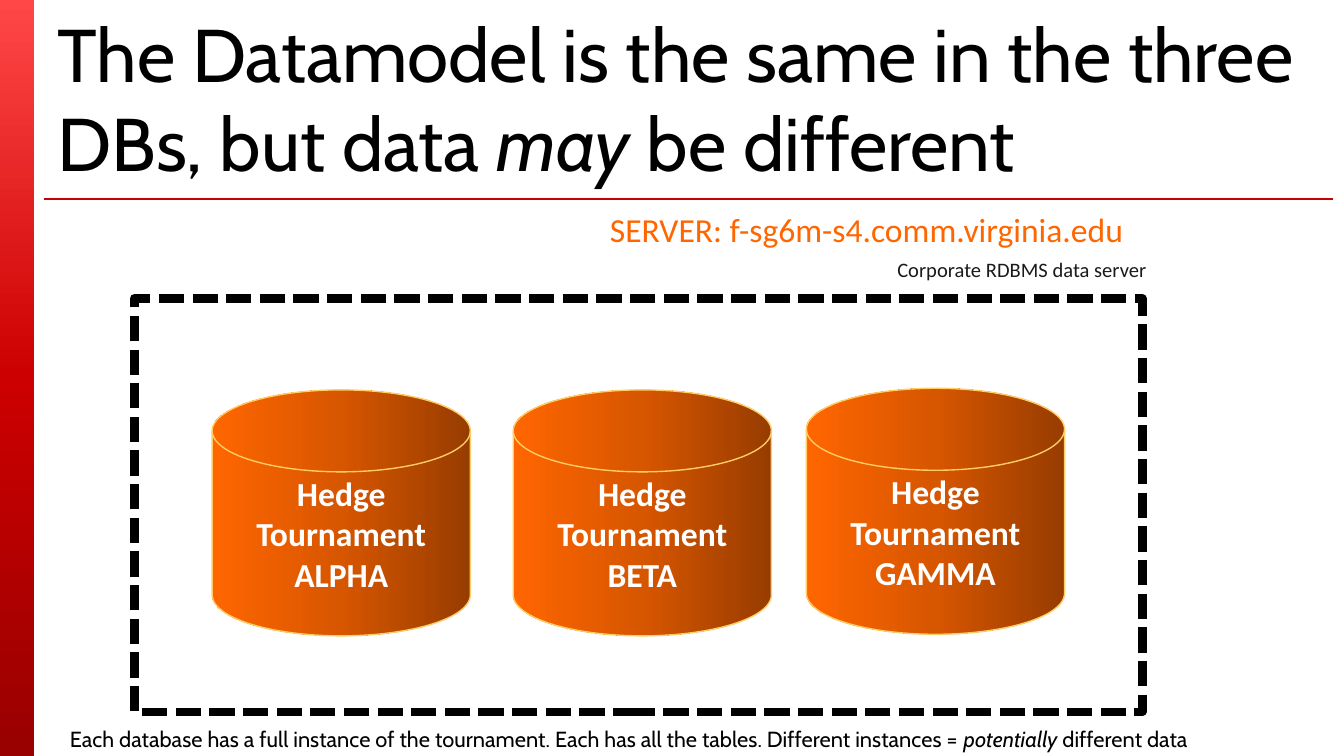
from dataclasses import dataclass, field
from typing import Any, NamedTuple

from lxml import etree
from pptx import Presentation
from pptx.dml.color import RGBColor
from pptx.enum import dml, shapes, text
from pptx.oxml import ns
from pptx.util import Cm, Pt


@dataclass(frozen=True)
class Theme:
    """Colours, gradients (position in percent, colour) and text formats."""
    rule: str = "C80000"
    frame: str = "000000"
    can_edge: str = "FFCC66"
    bar: tuple = ((0, "FF4747"), (50, "CC0000"), (100, "990000"))
    can: tuple = ((0, "973C00"), (50, "D75600"), (100, "FF6600"))
    title: dict = field(default_factory=lambda: dict(name="Cabin", size=Pt(40), color="000000"))
    note: dict = field(default_factory=lambda: dict(name="Cabin", size=Pt(11.7), color="000000"))
    server: dict = field(default_factory=lambda: dict(name="Calibri", size=Pt(18), color="FF6600"))
    product: dict = field(default_factory=lambda: dict(name="Calibri", size=Pt(11), color="1A1A1A"))
    database: dict = field(
        default_factory=lambda: dict(name="Calibri", size=Pt(18), color="FFFFFF", bold=True))


class Box(NamedTuple):
    left: float
    top: float
    width: float
    height: float

    def lengths(self) -> list[Cm]:
        return [Cm(v) for v in self]


class Database(NamedTuple):
    name: str
    left: float
    top: float


class Label(NamedTuple):
    box: Box
    words: tuple[str, ...]  # every second piece is italic
    style: dict[str, Any]
    anchor: Any = text.MSO_ANCHOR.MIDDLE
    tight: bool = False  # centred, unwrapped, without insets


THEME = Theme()
CAN_WIDTH, CAN_HEIGHT = 4.88, 4.65
DATABASES = (
    Database("ALPHA", 4.01, 7.37),
    Database("BETA", 9.7, 7.37),
    Database("GAMMA", 15.24, 7.34),
)
LABELS = (
    Label(Box(0.84, 0.15, 24.34, 3.38),
          ("The Datamodel is the same in the three DBs, but data ", "may", " be different"),
          THEME.title),
    Label(Box(1.07, 13.59, 24.34, 0.69),
          ("Each database has a full instance of the tournament. Each has all the tables. "
           "Different instances = ", "potentially ", "different data"),
          THEME.note, text.MSO_ANCHOR.TOP),
    Label(Box(11.48, 3.96, 9.8, 0.76), ("SERVER: f-sg6m-s4.comm.virginia.edu",),
          THEME.server, tight=True),
    Label(Box(16.94, 4.85, 4.75, 0.48), ("Corporate RDBMS data server ",),
          THEME.product, tight=True),
)


def add_run(p, words: str, style: dict[str, Any], **extra: Any) -> None:
    r = p.add_run()
    r.text = words
    for key, value in {**style, **extra}.items():
        if key == "color":
            r.font.color.rgb = RGBColor.from_string(value)
        else:
            setattr(r.font, key, value)


def fill_gradient(sp, stops: tuple, angle: int) -> None:
    """Fill with any number of stops; the angle runs clockwise."""
    sp.fill.gradient()
    grad = sp._element.spPr.find(ns.qn("a:gradFill"))
    for child in list(grad):
        grad.remove(child)
    gs_list = etree.SubElement(grad, ns.qn("a:gsLst"))
    for position, color in stops:
        gs = etree.SubElement(gs_list, ns.qn("a:gs"), pos=str(position * 1000))
        etree.SubElement(gs, ns.qn("a:srgbClr"), val=color)
    etree.SubElement(grad, ns.qn("a:lin"), ang=str(angle * 60000), scaled="0")


def add_shape(s, kind, box: Box):
    sp = s.shapes.add_shape(kind, *box.lengths())
    sp.shadow.inherit = False
    return sp


def set_line(line, color: str, width: float) -> None:
    line.color.rgb = RGBColor.from_string(color)
    line.width = Pt(width)


def add_side_bar(s, height: float) -> None:
    sp = add_shape(s, shapes.MSO_SHAPE.RECTANGLE, Box(0, 0, 0.64, height))
    fill_gradient(sp, THEME.bar, 90)
    sp.line.fill.background()


def add_title_rule(s) -> None:
    line = s.shapes.add_connector(
        shapes.MSO_CONNECTOR.STRAIGHT, Cm(0.84), Cm(3.76), Cm(25.2), Cm(3.76))
    set_line(line.line, THEME.rule, 0.75)
    etree.SubElement(line._element.spPr, ns.qn("a:effectLst"))


def add_label(s, label: Label) -> None:
    tf = s.shapes.add_textbox(*label.box.lengths()).text_frame
    settings = dict(word_wrap=not label.tight, vertical_anchor=label.anchor)
    if label.tight:
        settings |= dict(margin_left=0, margin_right=0, margin_top=0, margin_bottom=0,
                         auto_size=text.MSO_AUTO_SIZE.SHAPE_TO_FIT_TEXT)
    for key, value in settings.items():
        setattr(tf, key, value)
    p = tf.paragraphs[0]
    p.alignment = text.PP_ALIGN.CENTER if label.tight else text.PP_ALIGN.LEFT
    for i, words in enumerate(label.words):
        add_run(p, words, label.style, italic=i % 2 == 1)


def add_database(s, db: Database) -> None:
    sp = add_shape(s, shapes.MSO_SHAPE.FLOWCHART_MAGNETIC_DISK,
                   Box(db.left, db.top, CAN_WIDTH, CAN_HEIGHT))
    fill_gradient(sp, THEME.can, 180)
    set_line(sp.line, THEME.can_edge, 0.75)
    tf = sp.text_frame
    tf.vertical_anchor = text.MSO_ANCHOR.MIDDLE
    p = tf.paragraphs[0]
    p.alignment = text.PP_ALIGN.CENTER
    for i, words in enumerate(("Hedge", "Tournament", db.name)):
        if i:
            p.add_line_break()
        add_run(p, words, THEME.database)


def add_server_frame(s) -> None:
    sp = add_shape(s, shapes.MSO_SHAPE.RECTANGLE, Box(2.54, 5.64, 19.05, 7.82))
    sp.fill.background()
    set_line(sp.line, THEME.frame, 4.5)
    sp.line.dash_style = dml.MSO_LINE.SQUARE_DOT


def main() -> None:
    prs = Presentation()
    prs.slide_width, prs.slide_height = Cm(25.4), Cm(14.29)
    s = prs.slides.add_slide(prs.slide_layouts[6])
    add_side_bar(s, 14.29)
    add_title_rule(s)
    for db in DATABASES:
        add_database(s, db)
    add_server_frame(s)
    for label in LABELS:
        add_label(s, label)
    prs.save("out.pptx")


if __name__ == "__main__":
    main()
